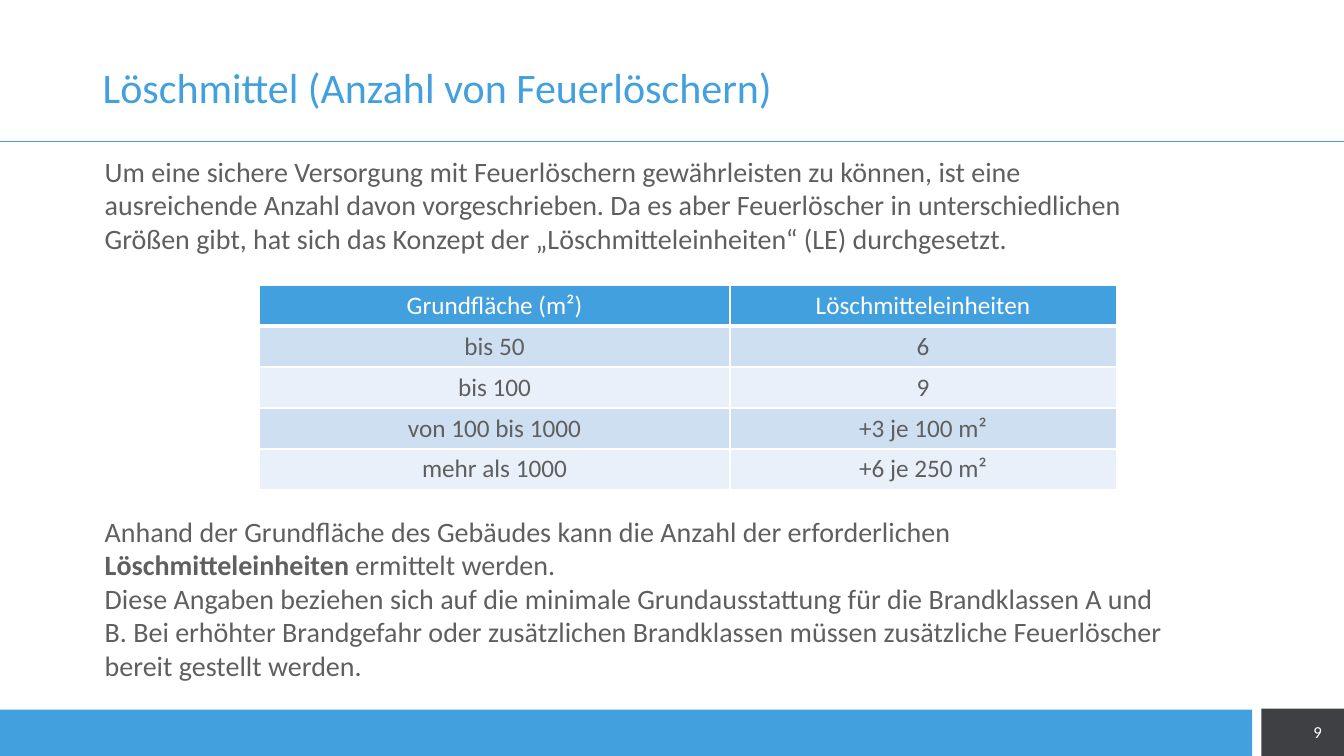
from lxml.etree import SubElement
from pptx import Presentation
from pptx.dml.color import RGBColor
from pptx.enum.shapes import MSO_CONNECTOR, MSO_SHAPE
from pptx.enum.text import MSO_ANCHOR as Anchor, PP_ALIGN as Align
from pptx.oxml.ns import qn
from pptx.util import Inches, Pt

BLUE = RGBColor(0x42, 0xA0, 0xDE)
DARK = RGBColor(0x3F, 0x40, 0x44)
GREY = RGBColor(0x5F, 0x5F, 0x5F)
WHITE = RGBColor(0xFF, 0xFF, 0xFF)
BAND_DARK = RGBColor(0xCF, 0xDF, 0xF2)
BAND_LIGHT = RGBColor(0xE9, 0xF0, 0xF9)
FONT = "Calibri"
SLIDE_WIDTH, SLIDE_HEIGHT = 13.33, 7.5

TITLE = "Löschmittel (Anzahl von Feuerlöschern)"
INTRO = [[(
    "Um eine sichere Versorgung mit Feuerlöschern gewährleisten zu können, ist eine "
    "ausreichende Anzahl davon vorgeschrieben. Da es aber Feuerlöscher in unterschiedlichen "
    "Größen gibt, hat sich das Konzept der „Löschmitteleinheiten“ (LE) durchgesetzt.", False)]]
UNITS = [
    ("Grundfläche (m²)", "Löschmitteleinheiten"),
    ("bis 50", "6"),
    ("bis 100", "9"),
    ("von 100 bis 1000", "+3 je 100 m²"),
    ("mehr als 1000", "+6 je 250 m²"),
]
CONCLUSION = [
    [("Anhand der Grundfläche des Gebäudes kann die Anzahl der erforderlichen ", False),
     ("Löschmitteleinheiten", True),
     (" ermittelt werden.", False)],
    [("Diese Angaben beziehen sich auf die minimale Grundausstattung für die Brandklassen A und "
      "B. Bei erhöhter Brandgefahr oder zusätzlichen Brandklassen müssen zusätzliche Feuerlöscher "
      "bereit gestellt werden.", False)],
]


def add_run(paragraph, words, size, color, bold=False):
    """Append one formatted run to a paragraph."""
    run = paragraph.add_run()
    run.text = words
    run.font.name = FONT
    run.font.size = Pt(size)
    run.font.bold = bold
    run.font.color.rgb = color


def add_text(slide, box, paragraphs, size, color, anchor=Anchor.TOP, align=Align.LEFT, spacing=1.0):
    """Fill a wrapping text box with paragraphs of (words, bold) runs."""
    frame = slide.shapes.add_textbox(*map(Inches, box)).text_frame
    frame.word_wrap = True
    frame.vertical_anchor = anchor
    for index, runs in enumerate(paragraphs):
        paragraph = frame.add_paragraph() if index else frame.paragraphs[0]
        paragraph.alignment = align
        paragraph.line_spacing = spacing
        for words, bold in runs:
            add_run(paragraph, words, size, color, bold)


def add_bar(slide, box, color):
    """Draw a plain filled rectangle."""
    bar = slide.shapes.add_shape(MSO_SHAPE.RECTANGLE, *map(Inches, box))
    bar.shadow.inherit = False
    bar.fill.solid()
    bar.fill.fore_color.rgb = color
    bar.line.fill.background()


def add_footer(slide, box, number):
    """Place the blue bar and the dark page number field in the box."""
    left, top, width, height = box
    number_width, gap = 0.82, 0.09
    number_left = left + width - number_width
    add_bar(slide, (number_left, top, number_width, height), DARK)
    add_bar(slide, (left, top + 0.01, width - number_width - gap, height), BLUE)
    add_text(slide, (number_left + 0.13, top + 0.03, 0.57, 0.4), [[(number, False)]],
             12, WHITE, Anchor.MIDDLE, Align.RIGHT)


def add_heading(slide, box):
    """Place the title in the box and the rule across the slide beneath it."""
    left, top, width, height = box
    rule_top = Inches(top + height + 0.02)
    rule = slide.shapes.add_connector(
        MSO_CONNECTOR.STRAIGHT, 0, rule_top, Inches(SLIDE_WIDTH), rule_top)
    rule.line.color.rgb = BLUE
    rule.line.width = Pt(0.5)
    SubElement(rule._element.spPr, qn("a:effectLst"))
    add_text(slide, box, [[(TITLE, False)]], 30, BLUE, Anchor.MIDDLE, spacing=0.9)


def style_cell(cell, fill, bottom_width):
    """Give a cell white borders and a solid fill."""
    properties = cell._tc.get_or_add_tcPr()
    for side, width in (("L", 1), ("R", 1), ("T", 1), ("B", bottom_width)):
        border = SubElement(properties, qn(f"a:ln{side}"), w=str(Pt(width)))
        SubElement(SubElement(border, qn("a:solidFill")), qn("a:srgbClr"), val=str(WHITE))
    cell.fill.solid()
    cell.fill.fore_color.rgb = fill


def add_units_table(slide, box):
    """Place the table of extinguishing units in the box."""
    table = slide.shapes.add_table(len(UNITS), 2, *map(Inches, box)).table
    for column, width in zip(table.columns, (4.67, 3.83)):
        column.width = Inches(width)
    for row_index, row in enumerate(UNITS):
        is_header = row_index == 0
        band = BAND_DARK if row_index % 2 else BAND_LIGHT
        for column_index, words in enumerate(row):
            cell = table.cell(row_index, column_index)
            style_cell(cell, BLUE if is_header else band, 3 if is_header else 1)
            paragraph = cell.text_frame.paragraphs[0]
            paragraph.alignment = Align.CENTER
            add_run(paragraph, words, 18, WHITE if is_header else GREY)


def main():
    """Build the slide and save it."""
    deck = Presentation()
    deck.slide_width, deck.slide_height = Inches(SLIDE_WIDTH), Inches(SLIDE_HEIGHT)
    slide = deck.slides.add_slide(deck.slide_layouts[6])
    add_footer(slide, (0, 7.03, SLIDE_WIDTH, 0.47), "9")
    add_heading(slide, (0.92, 0.4, 11.5, 0.98))
    add_units_table(slide, (2.57, 2.83, 8.5, 2.03))
    add_text(slide, (0.94, 5.05, 10.8, 1.78), CONCLUSION, 20, GREY)
    add_text(slide, (0.94, 1.48, 10.8, 1.45), INTRO, 20, GREY)
    deck.save("out.pptx")


if __name__ == "__main__":
    main()
